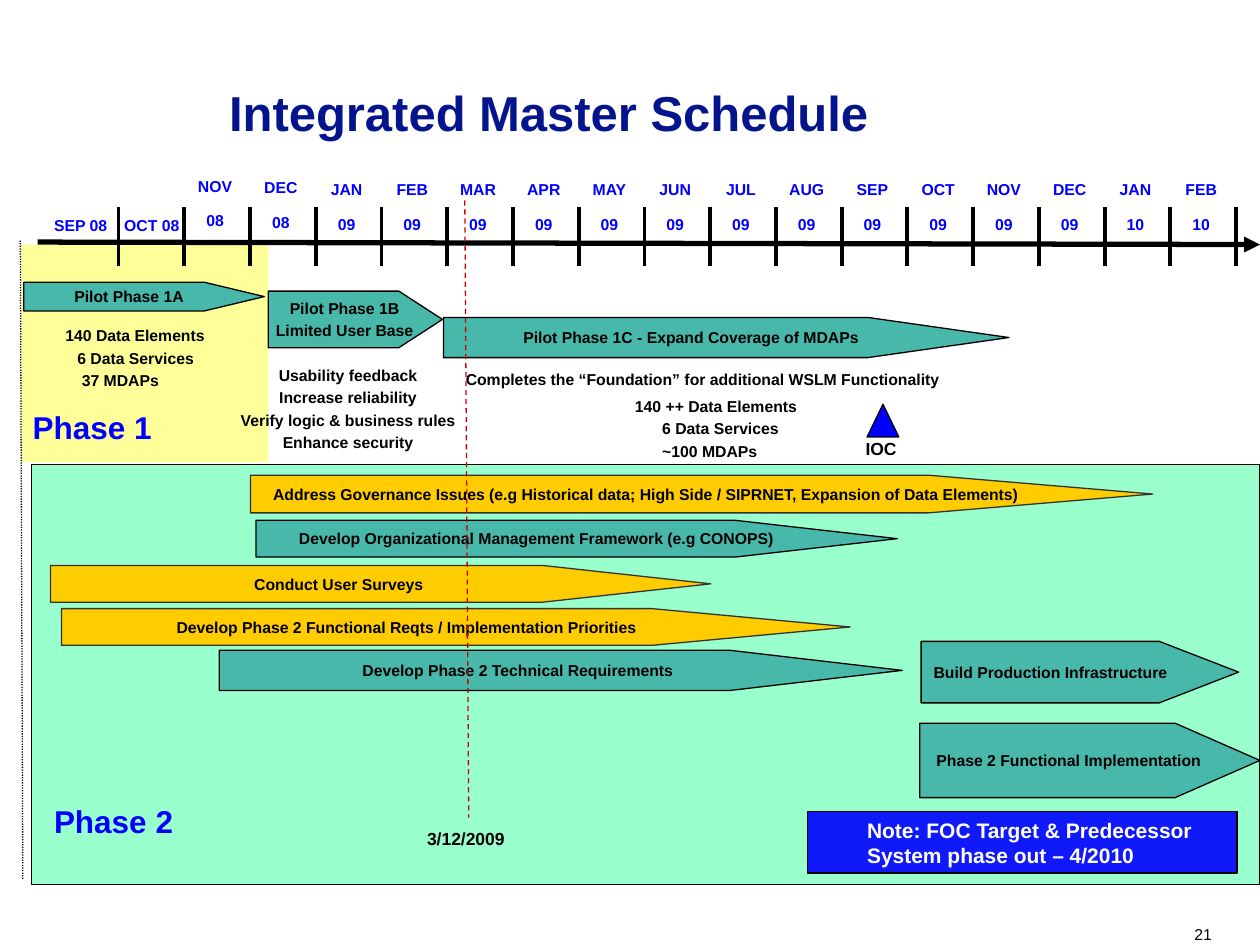
import lxml.etree
import pptx
import pptx.dml.color
import pptx.enum.dml
import pptx.enum.shapes
import pptx.enum.text
import pptx.oxml.ns
import pptx.util

Cm, Pt = pptx.util.Cm, pptx.util.Pt
SHAPE = pptx.enum.shapes.MSO_SHAPE
DASH = pptx.enum.dml.MSO_LINE
ANCHOR = pptx.enum.text.MSO_ANCHOR
ALIGN = pptx.enum.text.PP_ALIGN
qn = pptx.oxml.ns.qn

COLORS = {
    "black": "000000", "white": "FFFFFF", "title": "04148C", "blue": "0000FF",
    "yellow": "FFFF99", "mint": "99FFCC", "teal": "48B8AB", "gold": "FFCC00",
    "grey": "333333", "red": "CC0000",
}
MONTHS = [
    ("NOV", "08", 0), ("DEC", "08", 0.03), ("JAN", "09", 0.07), ("FEB", "09", 0.07),
    ("MAR", "09", 0.07), ("APR", "09", 0.07), ("MAY", "09", 0.07), ("JUN", "09", 0.07),
    ("JUL", "09", 0.07), ("AUG", "09", 0.07), ("SEP", "09", 0.07), ("OCT", "09", 0.07),
    ("NOV", "09", 0.07), ("DEC", "09", 0.07), ("JAN", "10", 0.07), ("FEB", "10", 0.07),
]
PHASE_1_BARS = [
    (["Pilot Phase 1A"], 0.05, 0.76, 4.85, 0.58, 2.09),
    (["Pilot Phase 1B", "Limited User Base"], 4.98, 0.94, 3.51, 1.14, 0.77),
    (["Pilot Phase 1C - Expand Coverage of MDAPs"], 8.51, 1.47, 11.4, 0.81, 3.51),
]
PHASE_2_BARS = [
    ("Address Governance Issues (e.g Historical data; High Side / SIPRNET, "
     "Expansion of Data Elements)", 4.41, 0.21, 18.19, 0.76, 5.96, "gold", "c"),
    ("Develop Organizational Management Framework (e.g CONOPS)",
     4.52, 1.12, 12.93, 0.74, 4.41, "teal", "c"),
    ("Conduct User Surveys", 0.38, 2.03, 13.31, 0.74, 4.58, "gold", "c"),
    ("Develop Phase 2 Functional Reqts / Implementation Priorities",
     0.6, 2.9, 15.9, 0.74, 5.4, "gold", "c"),
    ("Develop Phase 2 Technical Requirements", 3.78, 3.74, 13.77, 0.81, 4.29, "teal", "c"),
    ("Build Production Infrastructure", 17.93, 3.56, 6.4, 1.24, 1.29, "teal", "l"),
    ("Phase 2 Functional Implementation", 17.9, 5.21, 6.86, 1.5, 1.14, "teal", "c"),
]


def rgb(name):
    """Return the named colour."""
    return pptx.dml.color.RGBColor.from_string(COLORS[name])


def fill_text(sp, lines, size=9, color="black", align="l", gap=2, bold=True,
              wrap=True, anchor=ANCHOR.TOP, indents=None):
    """Write one paragraph per line into a shape."""
    tf = sp.text_frame
    tf.word_wrap = wrap
    tf.vertical_anchor = anchor
    for i, line in enumerate(lines):
        p = tf.paragraphs[0] if i == 0 else tf.add_paragraph()
        p.alignment = {"l": ALIGN.LEFT, "c": ALIGN.CENTER, "r": ALIGN.RIGHT}[align]
        if i:
            p.space_before = Pt(gap)
        if indents:
            p._p.get_or_add_pPr().set("marL", str(Cm(indents[i])))
        r = p.add_run()
        r.text = line
        r.font.name, r.font.size, r.font.bold = "Arial", Pt(size), bold
        r.font.color.rgb = rgb(color)
    return tf


def add_text(s, x, y, w, h, lines, **style):
    """Add a text box."""
    sp = s.shapes.add_textbox(Cm(x), Cm(y), Cm(w), Cm(h))
    return fill_text(sp, lines, **style)


def add_shape(s, kind, x, y, w, h, fill, line="black"):
    """Add a flat filled shape, outlined unless line is None."""
    sp = s.shapes.add_shape(kind, Cm(x), Cm(y), Cm(w), Cm(h))
    sp.shadow.inherit = False
    sp.fill.solid()
    sp.fill.fore_color.rgb = rgb(fill)
    if line:
        sp.line.color.rgb = rgb(line)
        sp.line.width = Pt(0.75)
    else:
        sp.line.fill.background()
    return sp


def add_bar(s, x, y, w, h, point, lines, fill="teal", align="c"):
    """Add an arrow-shaped task bar with its label."""
    outline = "grey" if fill == "gold" else "black"
    sp = add_shape(s, SHAPE.PENTAGON, x, y, w, h, fill, outline)
    sp.adjustments[0] = point
    fill_text(sp, lines, align=align, wrap=align == "l", anchor=ANCHOR.MIDDLE)


def add_line(s, x1, y1, x2, y2, width=0.75, color="black", dash=None, arrow=False):
    """Add a straight line, optionally dashed or with an arrowhead."""
    c = s.shapes.add_connector(pptx.enum.shapes.MSO_CONNECTOR.STRAIGHT,
                               Cm(x1), Cm(y1), Cm(x2), Cm(y2))
    c.line.color.rgb = rgb(color)
    c.line.width = Pt(width)
    if dash:
        c.line.dash_style = dash
    if arrow:
        lxml.etree.SubElement(c.line._get_or_add_ln(), qn("a:tailEnd"), type="triangle")
    lxml.etree.SubElement(c._element.spPr, qn("a:effectLst"))


def add_title(s, x, y, w, h):
    """Place the slide title."""
    tf = add_text(s, x, y, w, h, ["Integrated Master Schedule"], size=28,
                  color="title", anchor=ANCHOR.BOTTOM)
    tf.margin_left = tf.margin_right = tf.margin_top = tf.margin_bottom = 0
    tf.paragraphs[0].line_spacing = 0.9


def add_timeline(s, x, y, w, h):
    """Place the time axis with its month ticks and labels."""
    first, step = x + 1.63, 22.53 / 17
    add_line(s, x, y + 1.45, x + w, y + 1.5, width=3, arrow=True)
    for i in range(18):
        tick = first + i * step
        add_line(s, tick, y + 0.74, tick, y + h, width=2.25)
    add_text(s, x + 0.08, y + 0.8, 1.9, 0.5, ["SEP 08"], color="blue")
    add_text(s, x + 1.35, y + 0.8, 1.9, 0.5, ["OCT 08"], color="blue", align="c")
    for i, (month, year, drop) in enumerate(MONTHS, 1):
        add_text(s, first + i * step - 0.04, y + drop, 1.32, 1.09, [month, year],
                 color="blue", align="c", gap=9)


def add_phase_1(s, x, y, w, h):
    """Place the pilot phase panel, bars and notes."""
    add_shape(s, SHAPE.RECTANGLE, x, y, w, h, "yellow", None)
    for lines, dx, dy, bw, bh, point in PHASE_1_BARS:
        add_bar(s, x + dx, y + dy, bw, bh, point, lines)
    add_text(s, x - 0.02, y + 3.17, 3.8, 1.02, ["Phase 1"], size=18, color="blue")
    add_text(s, x + 0.48, y + 1.52, 3.66, 0.61,
             ["140 Data Elements", "6 Data Services", "37 MDAPs"], indents=[0.16, 0.4, 0.49])
    add_text(s, x + 4.02, y + 2.31, 5.13, 0.69,
             ["Usability feedback", "Increase reliability",
              "Verify logic & business rules", "Enhance security"], align="c")
    add_text(s, x + 8.71, y + 2.39, 11.81, 0.99,
             ["Completes the “Foundation” for additional WSLM Functionality"])
    add_text(s, x + 12.02, y + 2.94, 4.17, 0.61,
             ["140 ++ Data Elements", "6 Data Services", "~100 MDAPs"], indents=[0.1, 0.65, 0.65])
    add_shape(s, SHAPE.ISOSCELES_TRIANGLE, x + 17.05, y + 3.22, 0.64, 0.66, "blue")
    add_text(s, x + 16.77, y + 3.78, 1.4, 0.69, ["IOC"], size=10)


def add_phase_2(s, x, y, w, h):
    """Place the second phase panel, bars and target note."""
    add_shape(s, SHAPE.RECTANGLE, x, y, w, h, "mint")
    for label, dx, dy, bw, bh, point, fill, align in PHASE_2_BARS:
        add_bar(s, x + dx, y + dy, bw, bh, point, [label], fill, align)
    add_text(s, x + 0.2, y + 6.68, 4.98, 1.02, ["Phase 2"], size=18, color="blue")
    note = add_shape(s, SHAPE.RECTANGLE, x + 15.64, y + 6.99, 8.66, 1.24, "blue")
    clr = note._element.spPr.find(qn("a:solidFill")).find(qn("a:srgbClr"))
    lxml.etree.SubElement(clr, qn("a:alpha"), val="90000")
    tf = fill_text(note, ["Note: FOC Target & Predecessor System phase out – 4/2010"],
                   size=12, color="white")
    tf.margin_left = Cm(1.2)


def add_markers(s, x, y, w, h):
    """Place the dotted start line and the dashed status date line."""
    add_line(s, x, y + 0.81, x + 0.05, y + h, dash=DASH.ROUND_DOT)
    add_line(s, x + 8.96, y, x + w, y + 12.44, color="red", dash=DASH.DASH)
    add_text(s, x + 7.95, y + 12.52, 2.6, 0.69, ["3/12/2009"], size=10)


def add_page_number(s, x, y, w, h):
    """Place the page number."""
    tf = add_text(s, x, y, w, h, ["21"], align="r", bold=False)
    tf.margin_left = tf.margin_right = tf.margin_top = tf.margin_bottom = 0


def main():
    """Build and save the schedule slide."""
    prs = pptx.Presentation()
    prs.slide_width, prs.slide_height = Cm(25.4), Cm(19.05)
    s = prs.slides.add_slide(prs.slide_layouts[6])
    add_title(s, 4.62, 1.07, 19.51, 1.8)
    add_phase_1(s, 0.43, 4.93, 4.98, 4.39)
    add_phase_2(s, 0.64, 9.37, 24.76, 8.46)
    add_timeline(s, 0.76, 3.43, 24.64, 1.93)
    add_markers(s, 0.41, 4.04, 9.04, 13.69)
    add_page_number(s, 23.43, 18.64, 1, 0.38)
    prs.save("out.pptx")


if __name__ == "__main__":
    main()
